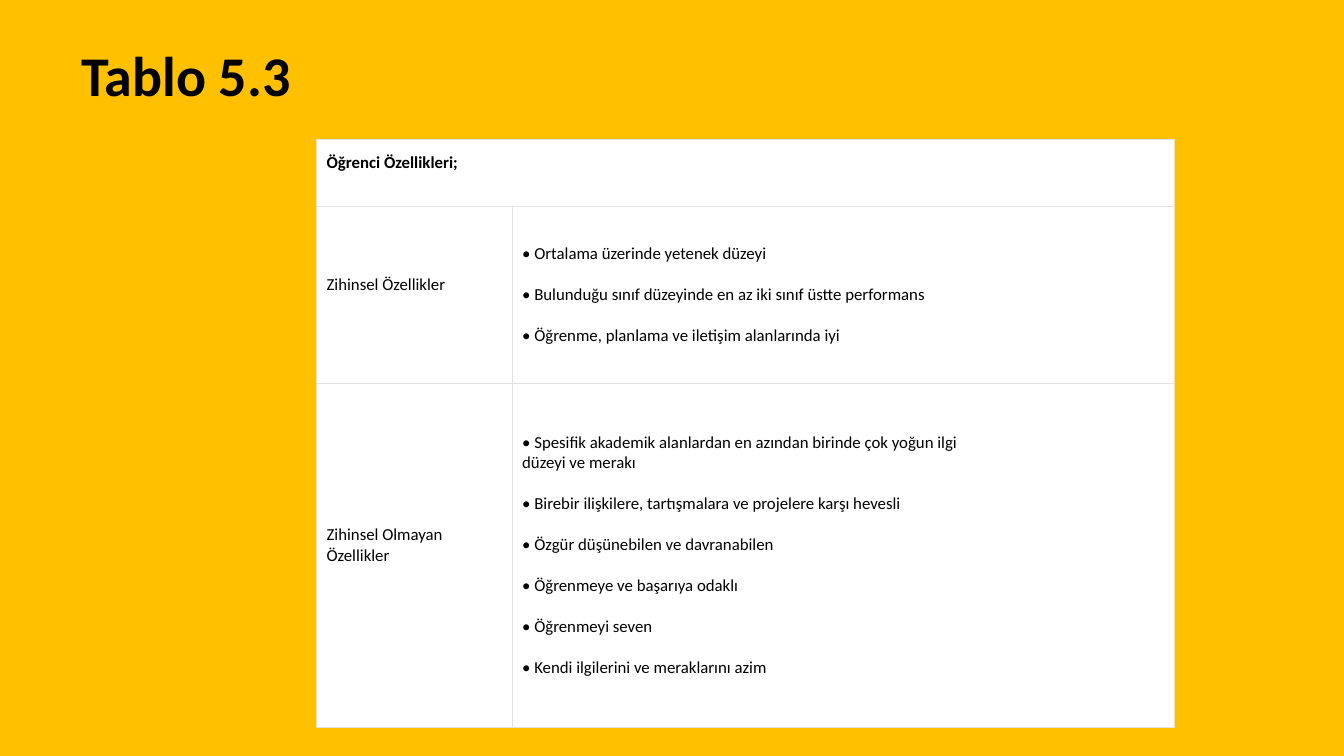
"""Build the slide "Tablo 5.3" with its table of student traits."""
import pptx
import pptx.dml.color
import pptx.enum.dml
import pptx.enum.text
import pptx.oxml
import pptx.oxml.ns
import pptx.util

Pt = pptx.util.Pt
RGBColor = pptx.dml.color.RGBColor

AMBER = RGBColor(0xFF, 0xC0, 0x00)
WHITE = RGBColor(0xFF, 0xFF, 0xFF)
BLACK = RGBColor(0x00, 0x00, 0x00)
RULE_GREY = RGBColor(0xE2, 0xE2, 0xE2)

FONT = "Calibri"
LINE_HEIGHT = 14.65
COLUMN_WIDTHS = (139.7, 473)
ROW_HEIGHTS = (48.2, 126, 246.2)

HEADING = "Öğrenci Özellikleri;"
TRAITS = (
    ("Zihinsel Özellikler", (
        "• Ortalama üzerinde yetenek düzeyi",
        "• Bulunduğu sınıf düzeyinde en az iki sınıf üstte performans",
        "• Öğrenme, planlama ve iletişim alanlarında iyi",
    )),
    ("Zihinsel Olmayan Özellikler", (
        "• Spesifik akademik alanlardan en azından birinde çok yoğun ilgi",
        "düzeyi ve merakı",
        "• Birebir ilişkilere, tartışmalara ve projelere karşı hevesli",
        "• Özgür düşünebilen ve davranabilen",
        "• Öğrenmeye ve başarıya odaklı",
        "• Öğrenmeyi seven",
        "• Kendi ilgilerini ve meraklarını azim",
    )),
)


def format_text(frame, size, bold=False):
    """Give every run in the frame the slide's font."""
    for paragraph in frame.paragraphs:
        for run in paragraph.runs:
            run.font.name = FONT
            run.font.size = Pt(size)
            run.font.bold = bold
            run.font.color.rgb = BLACK


def add_title(slide, title):
    """Add the bold slide title."""
    title_box = slide.shapes.add_textbox(Pt(51), Pt(25.2), Pt(287.3), Pt(55.4))
    frame = title_box.text_frame
    frame.word_wrap = True
    frame.auto_size = pptx.enum.text.MSO_AUTO_SIZE.SHAPE_TO_FIT_TEXT
    frame.text = title
    format_text(frame, 40, bold=True)


def style_cell(cell):
    """Give a cell its fill, insets and thin grey borders."""
    cell.margin_left = cell.margin_right = Pt(7.2)
    cell.margin_top = cell.margin_bottom = Pt(2.2)
    cell.vertical_anchor = pptx.enum.text.MSO_ANCHOR.MIDDLE
    properties = cell._tc.get_or_add_tcPr()
    for side in ("lnL", "lnR", "lnT", "lnB"):
        properties.append(pptx.oxml.parse_xml(
            f'<a:{side} {pptx.oxml.ns.nsdecls("a")} w="{Pt(0.75)}">'
            f'<a:solidFill><a:srgbClr val="{RULE_GREY}"/></a:solidFill>'
            f'</a:{side}>'))
    cell.fill.solid()
    cell.fill.fore_color.rgb = WHITE


def fill_label(cell, label, bold=False):
    """Write a label raised by one line's worth of bottom inset."""
    cell.text_frame.text = label
    cell.margin_bottom = Pt(2.2 + LINE_HEIGHT)
    format_text(cell.text_frame, 12, bold)


def fill_traits(cell, traits):
    """Write the traits with a line of space before each later bullet."""
    cell.text_frame.text = "\n".join(traits)
    for paragraph in cell.text_frame.paragraphs[1:]:
        if paragraph.text.startswith("•"):
            paragraph.space_before = Pt(LINE_HEIGHT)
    format_text(cell.text_frame, 12)


def add_trait_table(slide):
    """Add the table with a merged heading over labelled trait rows."""
    table = slide.shapes.add_table(
        len(ROW_HEIGHTS), len(COLUMN_WIDTHS), Pt(226.1), Pt(99.4),
        Pt(sum(COLUMN_WIDTHS)), Pt(sum(ROW_HEIGHTS))).table
    table.horz_banding = False
    for column, width in zip(table.columns, COLUMN_WIDTHS):
        column.width = Pt(width)
    for row, height in zip(table.rows, ROW_HEIGHTS):
        row.height = Pt(height)
    for cell in table.iter_cells():
        style_cell(cell)
    table.cell(0, 0).merge(table.cell(0, 1))
    fill_label(table.cell(0, 0), HEADING, bold=True)
    for row_index, (label, traits) in enumerate(TRAITS, start=1):
        fill_label(table.cell(row_index, 0), label)
        fill_traits(table.cell(row_index, 1), traits)


def main():
    """Build and save the presentation."""
    presentation = pptx.Presentation()
    presentation.slide_width = Pt(960)
    presentation.slide_height = Pt(540)
    slide = presentation.slides.add_slide(presentation.slide_layouts[6])
    slide.background.fill.solid()
    slide.background.fill.fore_color.rgb = AMBER
    add_trait_table(slide)
    add_title(slide, "Tablo 5.3")
    presentation.save("out.pptx")


if __name__ == "__main__":
    main()
